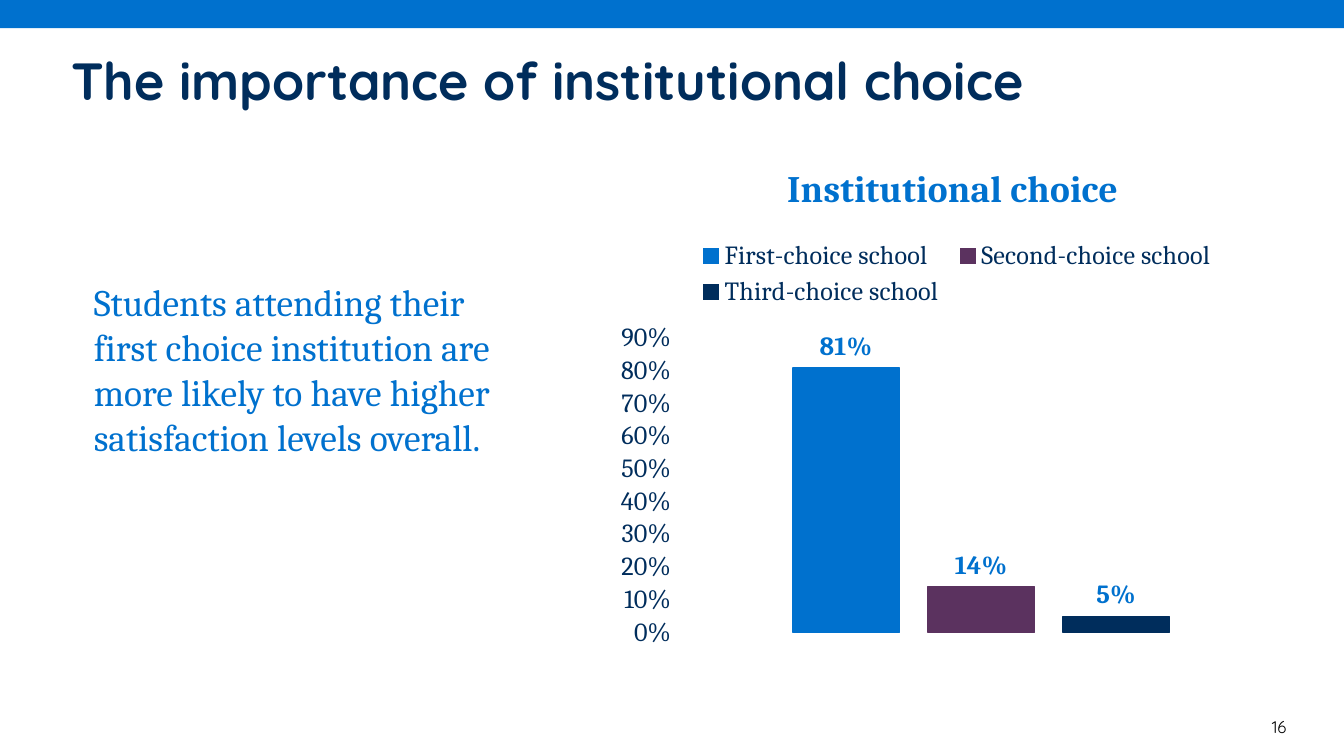
"""Build a slide relating institutional choice to student satisfaction."""
from lxml.etree import SubElement
from pptx import Presentation
from pptx.chart.data import CategoryChartData
from pptx.dml.color import RGBColor
from pptx.enum.chart import (XL_CHART_TYPE, XL_LABEL_POSITION,
                             XL_LEGEND_POSITION, XL_TICK_MARK)
from pptx.enum.shapes import MSO_SHAPE
from pptx.enum.text import MSO_ANCHOR, MSO_AUTO_SIZE, PP_ALIGN
from pptx.oxml.ns import qn
from pptx.util import Inches, Pt

BLUE, NAVY, PURPLE, BLACK = "0071CE", "002D5C", "5B325F", "000000"
HEADING_FONT, BODY_FONT = "Quicksand", "Cambria"

TITLE = "The importance of institutional choice"
MESSAGE = ("Students attending their first choice institution are more likely "
           "to have higher satisfaction levels overall.")
PAGE_NUMBER = "16"
CHART_TITLE = "Institutional choice"
CHOICES = [
    ("First-choice school", 0.81, BLUE),
    ("Second-choice school", 0.14, PURPLE),
    ("Third-choice school", 0.05, NAVY),
]


def color(value):
    return RGBColor.from_string(value)


def inches(*lengths):
    return [Inches(length) for length in lengths]


def style(font, size, fill, name=BODY_FONT, bold=False):
    font.size, font.name, font.bold = Pt(size), name, bold
    font.color.rgb = color(fill)


def write(frame, text, align=PP_ALIGN.LEFT, inset=None,
          anchor=MSO_ANCHOR.TOP, **font_format):
    frame.word_wrap = True
    frame.auto_size = MSO_AUTO_SIZE.NONE
    frame.vertical_anchor = anchor
    if inset is not None:
        frame.margin_left = frame.margin_right = Inches(inset)
        frame.margin_top = frame.margin_bottom = Inches(inset)
    para = frame.paragraphs[0]
    para.alignment = align
    span = para.add_run()
    span.text = text
    style(span.font, **font_format)


def set_layout(parent, index, target=None, **fractions):
    old = parent.find(qn("c:layout"))
    if old is not None:
        parent.remove(old)
    layout = SubElement(parent, qn("c:layout"))
    parent.insert(index, layout)
    manual = SubElement(layout, qn("c:manualLayout"))
    if target:
        SubElement(manual, qn("c:layoutTarget")).set("val", target)
    for axis in ("x", "y"):
        SubElement(manual, qn(f"c:{axis}Mode")).set("val", "edge")
    for key, value in fractions.items():
        SubElement(manual, qn(f"c:{key}")).set("val", str(value))


def add_choice_chart(page):
    data = CategoryChartData(number_format="0%")
    data.categories = ["1"]
    for name, share, _ in CHOICES:
        data.add_series(name, [share])
    chart = page.shapes.add_chart(XL_CHART_TYPE.COLUMN_CLUSTERED,
                                  *inches(4.52, 1.06, 5.15, 3.84), data).chart
    style(chart.font, 10, NAVY)

    chart.has_title = True
    span = chart.chart_title.text_frame.paragraphs[0].add_run()
    span.text = CHART_TITLE
    style(span.font, 20, BLUE, bold=True)

    chart.has_legend = True
    chart.legend.position = XL_LEGEND_POSITION.TOP
    chart.legend.include_in_layout = False
    style(chart.legend.font, 14, NAVY)

    chart.category_axis.visible = False
    axis = chart.value_axis
    axis.minimum_scale, axis.maximum_scale, axis.major_unit = 0, 0.9, 0.1
    axis.has_major_gridlines = False
    axis.major_tick_mark = axis.minor_tick_mark = XL_TICK_MARK.NONE
    axis.format.line.fill.background()
    axis.tick_labels.number_format = "0%"
    axis.tick_labels.number_format_is_linked = False
    style(axis.tick_labels.font, 14, NAVY)

    plot = chart.plots[0]
    plot.vary_by_categories = False
    plot.gap_width, plot.overlap = 219, -27
    for series, (_, _, fill) in zip(plot.series, CHOICES):
        series.format.fill.solid()
        series.format.fill.fore_color.rgb = color(fill)
        series.format.line.color.rgb = color(fill)
        series.format.line.width = Pt(0.75)
        labels = series.data_labels
        labels.show_value = True
        labels.number_format, labels.number_format_is_linked = "0%", False
        labels.position = XL_LABEL_POSITION.OUTSIDE_END
        style(labels.font, 14, BLUE, bold=True)

    plot_area = chart.element.find(".//" + qn("c:plotArea"))
    title = chart.element.find(".//" + qn("c:title"))
    legend = chart.element.find(".//" + qn("c:legend"))
    set_layout(plot_area, 0, target="inner", x=0.1, y=0.38, w=0.88, h=0.57)
    set_layout(title, 1, x=0.25, y=0.03)
    set_layout(legend, 1, x=0.12, y=0.18, w=0.77, h=0.15)


def main():
    deck = Presentation()
    deck.slide_width = Inches(10)
    deck.slide_height = deck.slide_width * 9 // 16
    page = deck.slides.add_slide(deck.slide_layouts[5])

    banner = page.shapes.add_shape(MSO_SHAPE.RECTANGLE, *inches(0, 0, 10, 0.21))
    banner.shadow.inherit = False
    banner.fill.solid()
    banner.fill.fore_color.rgb = color(BLUE)
    banner.line.fill.background()

    title = page.shapes.title
    title.left, title.top, title.width, title.height = inches(0.53, 0.36, 9.14, 0.47)
    write(title.text_frame, TITLE, inset=0, anchor=MSO_ANCHOR.MIDDLE,
          size=28, fill=NAVY, name=HEADING_FONT, bold=True)

    add_choice_chart(page)

    message = page.shapes.add_textbox(*inches(0.6, 2.03, 3.24, 1.78))
    write(message.text_frame, MESSAGE, size=20, fill=BLUE)

    number = page.shapes.add_textbox(*inches(9.13, 5.28, 0.54, 0.25))
    write(number.text_frame, PAGE_NUMBER, align=PP_ALIGN.RIGHT,
          size=9, fill=BLACK, name=HEADING_FONT)

    deck.save("out.pptx")


if __name__ == "__main__":
    main()
